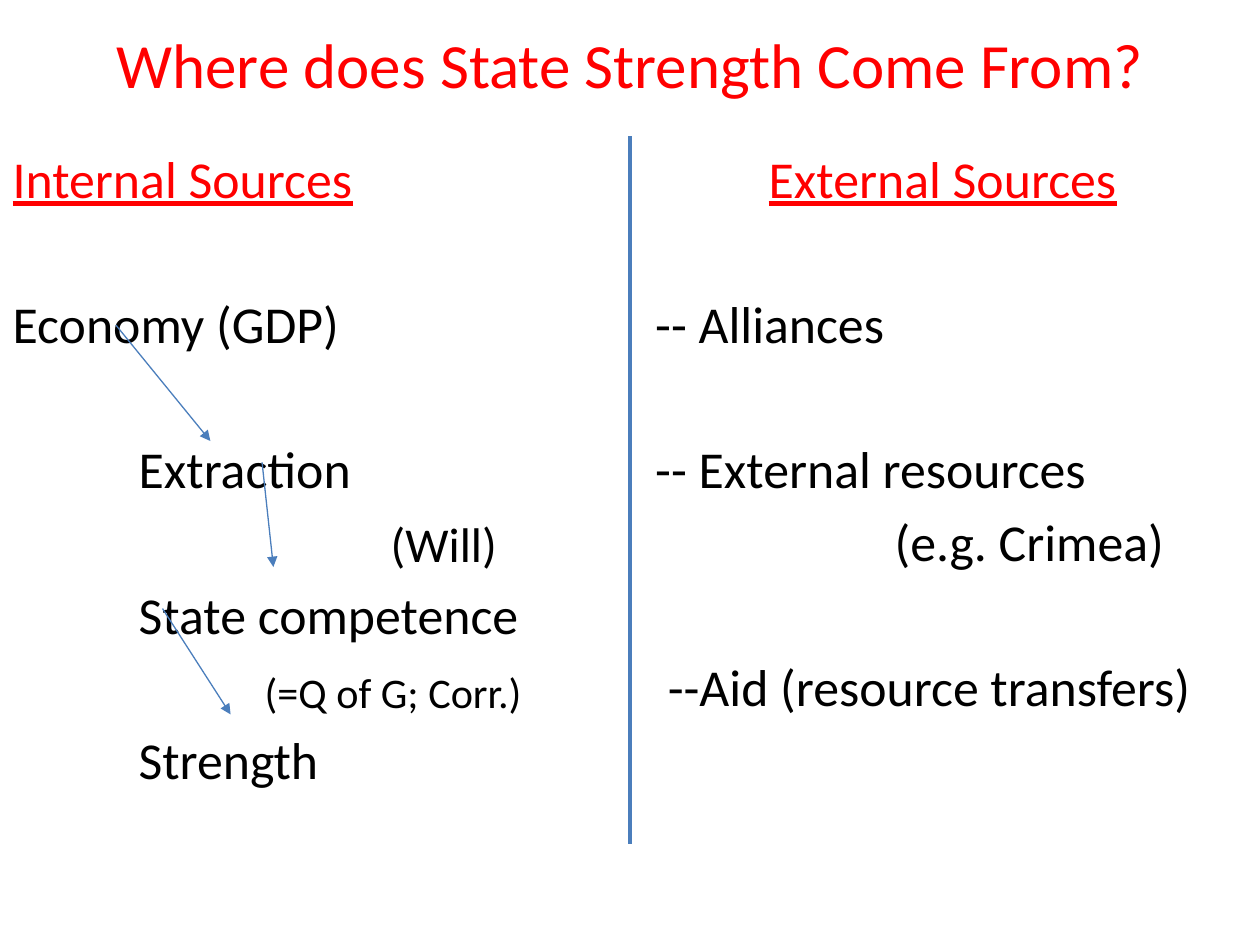
from dataclasses import dataclass

from pptx import Presentation
from pptx import util as u
from pptx.dml.color import RGBColor
from pptx.enum import shapes, text
from pptx.oxml.ns import qn
from lxml import etree


@dataclass(frozen=True)
class Theme:
    font: str = "Calibri"
    accent: str = "FF0000"
    ink: str = "000000"
    line: str = "4B7EBC"
    title: float = 36
    body: float = 29.6
    aside: float = 27.8
    note: float = 24.1
    row: float = 41.5  # height of one text row


THEME = Theme()
TITLE = "Where does State Strength Come From?"
HEADING = {"color": THEME.accent, "underline": True}

# Each entry: text, row of the grid, indent in inches, format values
INTERNAL = [
    ("Internal Sources", 0, 0, HEADING),
    ("Economy (GDP)", 2, 0, {}),
    ("Extraction", 4, 1, {}),
    ("(Will)", 5, 3, {"size": THEME.aside}),
    ("State competence", 6, 1, {}),
    ("(=Q of G; Corr.)", 7, 2, {"size": THEME.note}),
    ("Strength", 8, 1, {}),
]
EXTERNAL = [
    ("External Sources", 0, 1, HEADING),
    ("-- Alliances", 2, 0.1, {}),
    ("-- External resources", 4, 0.1, {}),
    ("(e.g. Crimea)", 5, 2, {}),
    ("--Aid (resource transfers)", 7, 0.2, {}),
]

WIDTH, HEIGHT = 10, 7.5
TOP, BOTTOM = 1.08, 6.7
MIDDLE = WIDTH / 2
DIVIDER = ((MIDDLE, TOP), (MIDDLE, BOTTOM))
ARROWS = [
    ((0.92, 2.58), (1.67, 3.5)),
    ((2.08, 3.67), (2.17, 4.5)),
    ((1.29, 4.83), (1.83, 5.67)),
]


def place(box, left, top, width, height):
    frame = {"left": left, "top": top, "width": width, "height": height}
    for name, value in frame.items():
        setattr(box, name, u.Inches(value))


def write(para, words, size=THEME.body, color=THEME.ink, underline=None):
    span = para.add_run()
    span.text = words
    values = {"name": THEME.font, "size": u.Pt(size), "underline": underline}
    for name, value in values.items():
        setattr(span.font, name, value)
    span.font.color.rgb = RGBColor.from_string(color)


def fill_column(box, entries):
    """Write entries on the row grid, turning skipped rows into spacing."""
    frame = box.text_frame
    frame.auto_size = text.MSO_AUTO_SIZE.NONE
    frame.margin_top = 0
    previous = -1
    for words, row, indent, style in entries:
        para = frame.paragraphs[0] if previous < 0 else frame.add_paragraph()
        para.line_spacing = u.Pt(THEME.row)
        para.space_before = u.Pt((row - previous - 1) * THEME.row)
        props = para._p.get_or_add_pPr()
        props.set("marL", str(u.Inches(indent)))
        props.set("indent", "0")
        etree.SubElement(props, qn("a:buNone"))
        write(para, words, **style)
        previous = row


def draw_line(page, start, end, weight, arrow=False):
    ends = [u.Inches(value) for value in (*start, *end)]
    line = page.shapes.add_connector(shapes.MSO_CONNECTOR.STRAIGHT, *ends)
    line.line.width = u.Pt(weight)
    line.line.color.rgb = RGBColor.from_string(THEME.line)
    if arrow:
        etree.SubElement(line.line._get_or_add_ln(), qn("a:tailEnd"), type="triangle")
    etree.SubElement(line._element.spPr, qn("a:effectLst"))


def main():
    deck = Presentation()
    deck.slide_width, deck.slide_height = u.Inches(WIDTH), u.Inches(HEIGHT)
    page = deck.slides.add_slide(deck.slide_layouts.get_by_name("Two Content"))
    title, left, right = list(page.placeholders)[:3]

    place(title, 0, 0, WIDTH, 1)
    title.text_frame.vertical_anchor = text.MSO_ANCHOR.MIDDLE
    heading = title.text_frame.paragraphs[0]
    heading.alignment = text.PP_ALIGN.CENTER
    write(heading, TITLE, THEME.title, THEME.accent)

    for column, (box, entries) in enumerate([(left, INTERNAL), (right, EXTERNAL)]):
        place(box, column * MIDDLE, TOP, MIDDLE, BOTTOM - TOP)
        fill_column(box, entries)

    draw_line(page, *DIVIDER, 2.75)
    for start, end in ARROWS:
        draw_line(page, start, end, 0.75, arrow=True)
    deck.save("out.pptx")


if __name__ == "__main__":
    main()
